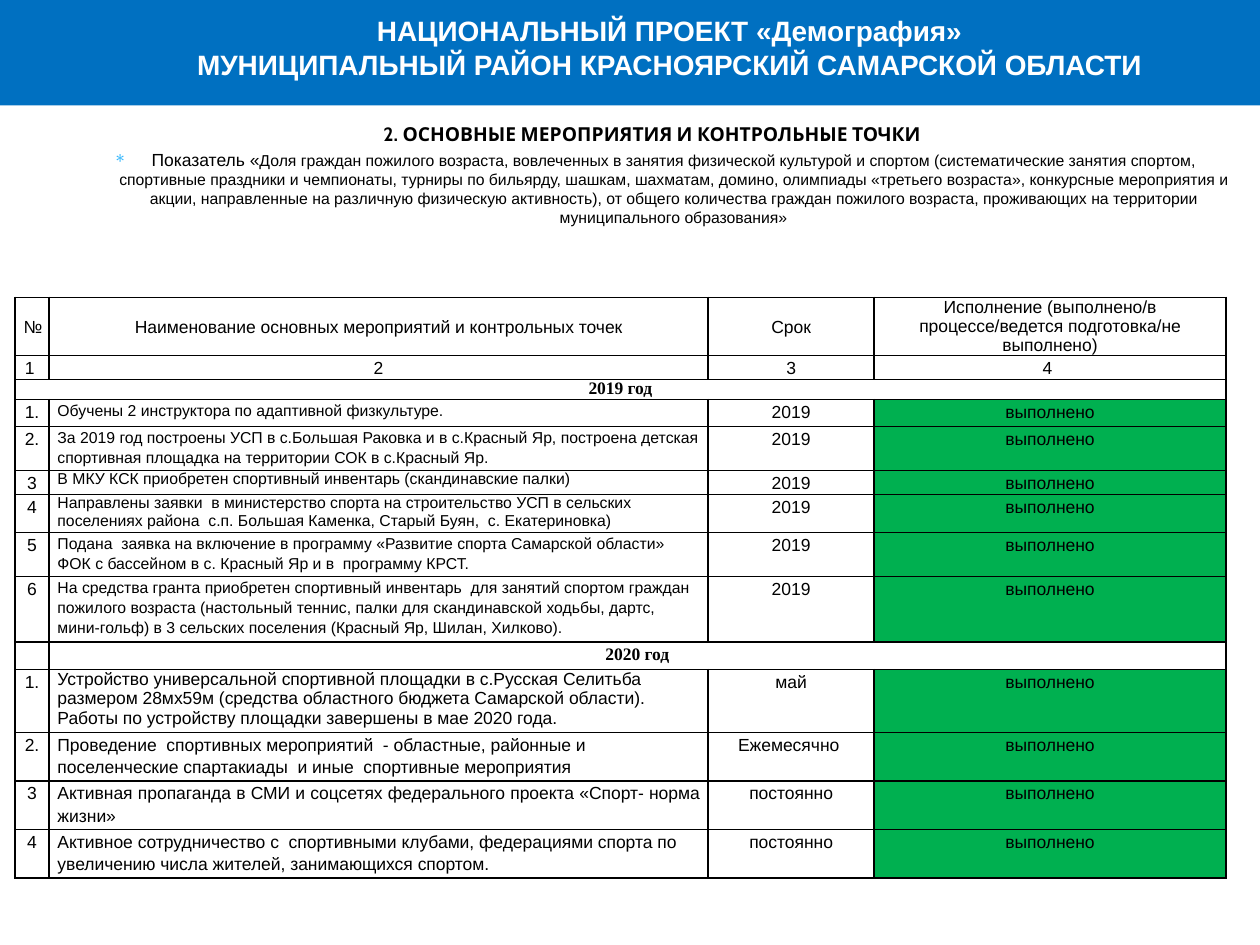
from dataclasses import dataclass

from lxml.etree import SubElement
from pptx import Presentation
from pptx.dml.color import RGBColor as Color
from pptx.enum.shapes import MSO_SHAPE as Shape
from pptx.enum.text import MSO_ANCHOR as Anchor, PP_ALIGN as Align
from pptx.oxml.ns import qn
from pptx.util import Pt


@dataclass(frozen=True)
class Theme:
    band: str = "0070C1"
    bullet: str = "31B6FD"
    done: str = "00B050"
    black: str = "000000"
    white: str = "FFFFFF"
    sans: str = "Arial"
    heading: str = "Cabin"
    serif: str = "Times New Roman"
    title_size: float = 16
    heading_size: float = 11
    text_size: float = 10
    small_size: float = 9
    spacing: float = 1.15


class PageBuilder:
    def __init__(self, page, theme):
        self.page = page
        self.theme = theme

    def band(self, left, top, width, height):
        shape = self.page.shapes.add_shape(
            Shape.RECTANGLE, Pt(left), Pt(top), Pt(width), Pt(height))
        shape.shadow.inherit = False
        shape.fill.solid()
        shape.fill.fore_color.rgb = Color.from_string(self.theme.band)
        shape.line.fill.background()

    def box(self, left, top, width, height):
        frame = self.page.shapes.add_textbox(
            Pt(left), Pt(top), Pt(width), Pt(height)).text_frame
        frame.word_wrap = True
        frame.margin_left = frame.margin_right = Pt(3.6)
        frame.margin_top = frame.margin_bottom = Pt(3.6)
        return frame

    def span(self, para, text, size=None, font=None, color=None, bold=False):
        run = para.add_run()
        run.text = text
        run.font.size = Pt(size or self.theme.text_size)
        run.font.name = font or self.theme.sans
        run.font.bold = bold
        run.font.color.rgb = Color.from_string(color or self.theme.black)

    def indent(self, para, left, first):
        props = para._p.get_or_add_pPr()
        props.set("marL", str(Pt(left)))
        props.set("indent", str(Pt(first)))
        return props

    def bullet(self, para, mark):
        props = self.indent(para, 21.6, -21.6)
        color = SubElement(props, qn("a:buClr"))
        SubElement(color, qn("a:srgbClr"), val=self.theme.bullet)
        SubElement(props, qn("a:buChar"), char=mark)

    def table(self, left, top, widths, heights):
        frame = self.page.shapes.add_table(
            len(heights), len(widths), Pt(left), Pt(top),
            Pt(sum(widths)), Pt(sum(heights)))
        table = frame.table
        table.first_row = table.horz_banding = False
        for column, width in zip(table.columns, widths):
            column.width = Pt(width)
        for row, height in zip(table.rows, heights):
            row.height = Pt(height)
        for cell in table.iter_cells():
            self.borders(cell)
            cell.fill.background()
            cell.margin_left = cell.margin_right = Pt(4.9)
            cell.margin_top = cell.margin_bottom = 0
        return table

    def borders(self, cell):
        props = cell._tc.get_or_add_tcPr()
        for side in ("lnL", "lnR", "lnT", "lnB"):
            line = SubElement(props, qn(f"a:{side}"), w=str(Pt(1)))
            fill = SubElement(line, qn("a:solidFill"))
            SubElement(fill, qn("a:srgbClr"), val=self.theme.black)

    def cell(self, cell, text, align=Align.CENTER, spacing=None, fill=None,
             middle=False, **style):
        para = cell.text_frame.paragraphs[0]
        para.alignment = align
        para.line_spacing = spacing or self.theme.spacing
        if middle:
            cell.vertical_anchor = Anchor.MIDDLE
        if fill:
            cell.fill.solid()
            cell.fill.fore_color.rgb = Color.from_string(fill)
        self.span(para, text, **style)

    def year(self, first, last, text):
        first.merge(last)
        self.cell(first, text, spacing=Pt(10), middle=True,
                  font=self.theme.serif, bold=True)


TITLE = ["НАЦИОНАЛЬНЫЙ ПРОЕКТ «Демография»",
         "МУНИЦИПАЛЬНЫЙ РАЙОН КРАСНОЯРСКИЙ САМАРСКОЙ ОБЛАСТИ"]
HEADING = "2. ОСНОВНЫЕ МЕРОПРИЯТИЯ И КОНТРОЛЬНЫЕ ТОЧКИ "
INDICATOR = (
    "Доля граждан пожилого возраста, вовлеченных в занятия физической культурой и спортом "
    "(систематические занятия спортом, спортивные праздники и чемпионаты, турниры по бильярду, "
    "шашкам, шахматам, домино, олимпиады «третьего возраста», конкурсные мероприятия и акции, "
    "направленные на различную физическую активность), от общего количества граждан пожилого "
    "возраста, проживающих на территории муниципального образования»")
COLUMNS = ["№", "Наименование основных мероприятий и контрольных точек", "Срок",
           "Исполнение (выполнено/в процессе/ведется подготовка/не выполнено)"]
COLUMN_NUMBERS = ["1 ", "2", "3", "4 "]
DONE = "выполнено"

# Number, event, line spacing
EVENTS_2019 = [
    ("1.", "Обучены 2 инструктора по адаптивной физкультуре.", 1.15),
    ("2.", "За 2019 год построены УСП в с.Большая Раковка и в с.Красный Яр, построена детская "
           "спортивная площадка на территории СОК в с.Красный Яр.", 1.15),
    ("3", "В МКУ КСК приобретен спортивный инвентарь (скандинавские палки)", 1.0),
    ("4", "Направлены заявки  в министерство спорта на строительство УСП в сельских поселениях "
          "района  с.п. Большая Каменка, Старый Буян,  с. Екатериновка)", 1.0),
    ("5", "Подана  заявка на включение в программу «Развитие спорта Самарской области» ФОК с "
          "бассейном в с. Красный Яр и в  программу КРСТ.", 1.15),
    ("6", "На средства гранта приобретен спортивный инвентарь  для занятий спортом граждан "
          "пожилого возраста (настольный теннис, палки для скандинавской ходьбы, дартс, "
          "мини-гольф) в 3 сельских поселения (Красный Яр, Шилан, Хилково).", 1.15),
]
# Number, event, line spacing, alignment, due date
EVENTS_2020 = [
    ("1.", "Устройство универсальной спортивной площадки в с.Русская Селитьба  размером 28мх59м "
           "(средства областного бюджета Самарской области). Работы по устройству площадки "
           "завершены в мае 2020 года.", 1.0, Align.LEFT, "май"),
    ("2.", "Проведение  спортивных мероприятий  - областные, районные и поселенческие "
           "спартакиады  и иные  спортивные мероприятия", 1.15, Align.LEFT, "Ежемесячно "),
    ("3", "Активная пропаганда в СМИ и соцсетях федерального проекта «Спорт- норма жизни»",
     1.15, Align.JUSTIFY, "постоянно"),
    ("4", "Активное сотрудничество с  спортивными клубами, федерациями спорта по увеличению "
          "числа жителей, занимающихся спортом.", 1.15, Align.LEFT, "постоянно"),
]
WIDTHS = [19.4, 376.6, 95, 200.9]
HEIGHTS = [33.2, 13.7, 11.5, 15.4, 25, 13.6, 21.8, 24.8, 37.5, 15.8, 36, 27.7, 27.7, 27.7]


def main():
    theme = Theme()
    deck = Presentation()
    deck.slide_width, deck.slide_height = Pt(720), Pt(540)
    builder = PageBuilder(deck.slides.add_slide(deck.slide_layouts[6]), theme)

    # Title band
    builder.band(0, 0, 720, 60.3)

    # Heading and indicator
    frame = builder.box(36.7, 66.2, 674.6, 70.6)
    para = frame.paragraphs[0]
    para.alignment = Align.CENTER
    builder.indent(para, 21.6, -21.6)
    builder.span(para, HEADING, theme.heading_size, theme.heading, bold=True)
    para = frame.add_paragraph()
    builder.bullet(para, "∗")
    para.alignment = Align.CENTER
    para.space_before = Pt(2)
    builder.span(para, "Показатель «")
    builder.span(para, INDICATOR, theme.small_size)

    # Table head
    table = builder.table(8.6, 169.9, WIDTHS, HEIGHTS)
    for column, (name, number) in enumerate(zip(COLUMNS, COLUMN_NUMBERS)):
        spacing = Pt(11) if column == 3 else None
        builder.cell(table.cell(0, column), name, spacing=spacing, middle=True)
        builder.cell(table.cell(1, column), number)

    # Year rows
    builder.year(table.cell(2, 0), table.cell(2, 3), "2019 год")
    builder.year(table.cell(9, 1), table.cell(9, 3), "2020 год")
    empty = table.cell(9, 0).text_frame.paragraphs[0]
    SubElement(empty._p, qn("a:endParaRPr"), sz=str(theme.text_size * 100))

    # Events of both years
    rows = [(3 + i, *event, Align.LEFT, "2019", theme.small_size, None)
            for i, event in enumerate(EVENTS_2019)]
    rows += [(10 + i, *event, theme.text_size, theme.white)
             for i, event in enumerate(EVENTS_2020)]
    for row, number, event, spacing, align, due, size, due_fill in rows:
        builder.cell(table.cell(row, 0), number)
        builder.cell(table.cell(row, 1), event, align, spacing, size=size)
        builder.cell(table.cell(row, 2), due, fill=due_fill)
        builder.cell(table.cell(row, 3), DONE, fill=theme.done)

    # Title
    frame = builder.box(54, 4.3, 657.4, 46.1)
    for i, text in enumerate(TITLE):
        para = frame.add_paragraph() if i else frame.paragraphs[0]
        para.alignment = Align.CENTER
        builder.span(para, text, theme.title_size, color=theme.white, bold=True)

    deck.save("out.pptx")


if __name__ == "__main__":
    main()
